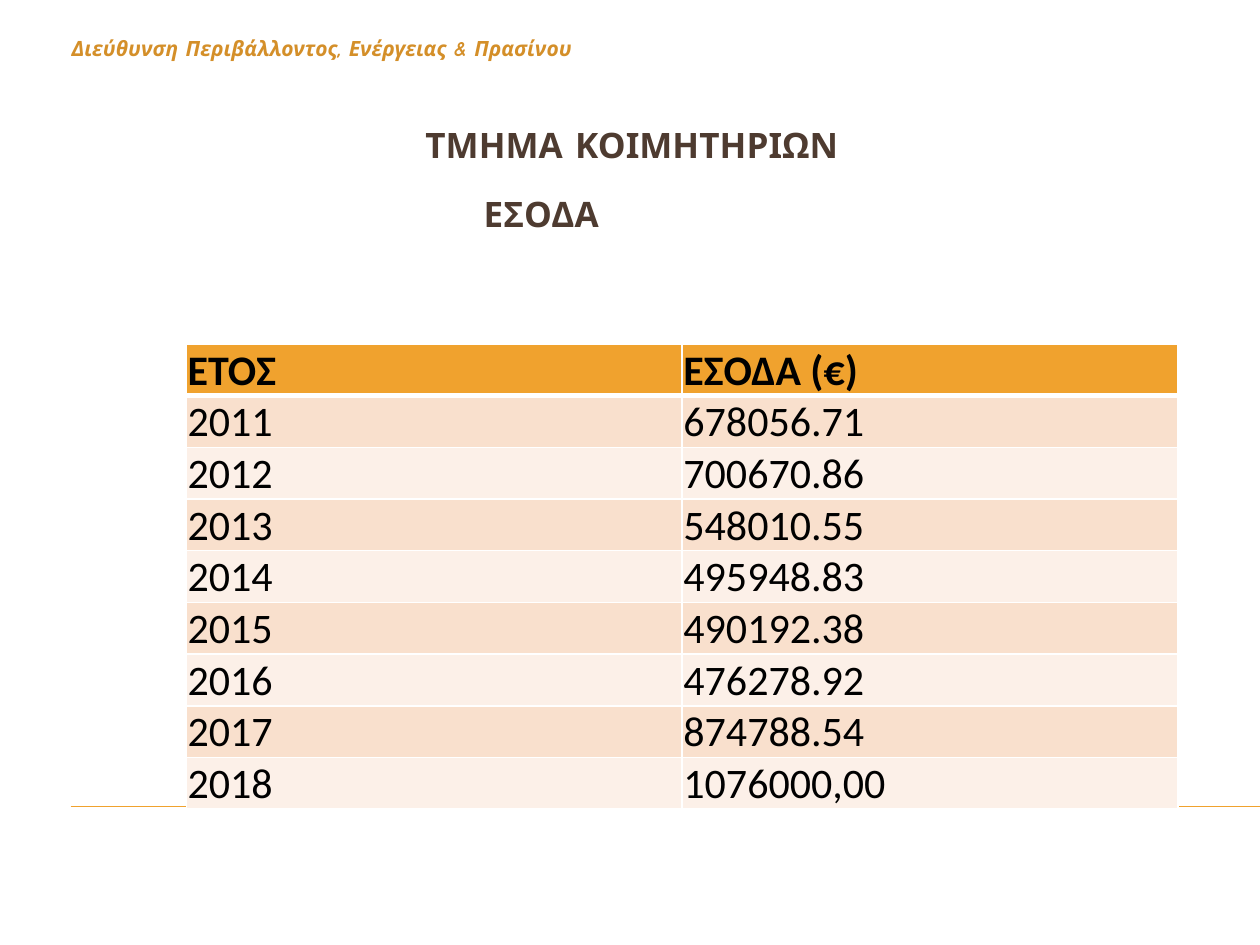
from lxml.etree import SubElement
from pptx import Presentation
from pptx.dml.color import RGBColor
from pptx.enum.shapes import MSO_CONNECTOR
from pptx.enum.text import MSO_ANCHOR, PP_ALIGN
from pptx.oxml.ns import qn
from pptx.util import Inches, Pt

COLORS = {
    "accent": "F0A22E",
    "department": "D48F29",
    "heading": "4E3B30",
    "band_dark": "F9E0CD",
    "band_light": "FCF0E8",
    "border": "FFFFFF",
    "cell_text": "000000",
}
HEADING = {"size": Pt(20), "name": "Comic Neue", "bold": True, "italic": False}
DEPARTMENT = {"size": Pt(12), "name": "Comic Neue", "bold": True, "italic": True}
CELL = {"size": Pt(24), "name": "Calibri"}

INCOME = [
    ("ΕΤΟΣ", "ΕΣΟΔΑ (€)"),
    ("2011", "678056.71"),
    ("2012", "700670.86"),
    ("2013", "548010.55"),
    ("2014", "495948.83"),
    ("2015", "490192.38"),
    ("2016", "476278.92"),
    ("2017", "874788.54"),
    ("2018", "1076000,00"),
]


def color(key):
    return RGBColor.from_string(COLORS[key])


def write(frame, text, font_values, color_key, alignment=PP_ALIGN.LEFT):
    para = frame.paragraphs[0]
    para.alignment = alignment
    span = para.add_run()
    span.text = text
    for name, value in font_values.items():
        setattr(span.font, name, value)
    span.font.color.rgb = color(color_key)


def add_title(page, box, text):
    title = page.shapes.title
    for name, value in zip(("left", "top", "width", "height"), box):
        setattr(title, name, Inches(value))
    title.text_frame.vertical_anchor = MSO_ANCHOR.MIDDLE
    write(title.text_frame, text, HEADING, "heading", PP_ALIGN.CENTER)


def add_label(page, box, *text_format):
    frame = page.shapes.add_textbox(*map(Inches, box)).text_frame
    frame.word_wrap = True
    write(frame, *text_format)


def add_footer_rule(page, left, right, top):
    rule = page.shapes.add_connector(
        MSO_CONNECTOR.STRAIGHT, *map(Inches, (left, top, right, top)))
    rule.line.color.rgb = color("accent")
    rule.line.width = Pt(0.75)
    SubElement(rule._element.spPr, qn("a:effectLst"))


def add_borders(cell, widths):
    """Draw the left, right, top and bottom borders; call before filling the cell."""
    properties = cell._tc.get_or_add_tcPr()
    for side, width in zip("LRTB", widths):
        edge = SubElement(properties, qn(f"a:ln{side}"), w=str(Pt(width)))
        fill = SubElement(edge, qn("a:solidFill"))
        SubElement(fill, qn("a:srgbClr"), val=COLORS["border"])


def add_income_table(page, box, rows):
    frame = page.shapes.add_table(len(rows), len(rows[0]), *map(Inches, box))
    cell_format = {
        "vertical_anchor": MSO_ANCHOR.BOTTOM,
        "margin_left": Inches(0.01),
        "margin_right": Inches(0.01),
        "margin_top": Inches(0.01),
        "margin_bottom": 0,
    }
    for row, values in enumerate(rows):
        header = row == 0
        band = "accent" if header else "band_dark" if row % 2 else "band_light"
        widths = (1, 1, 3 if row == 1 else 1, 3 if header else 1)
        for column, value in enumerate(values):
            cell = frame.table.cell(row, column)
            for name, setting in cell_format.items():
                setattr(cell, name, setting)
            add_borders(cell, widths)
            cell.fill.solid()
            cell.fill.fore_color.rgb = color(band)
            write(cell.text_frame, value, {**CELL, "bold": header}, "cell_text")


def main():
    deck = Presentation()
    deck.slide_width, deck.slide_height = Inches(10), Inches(7.5)
    page = deck.slides.add_slide(deck.slide_layouts[5])
    add_footer_rule(page, 0.56, 10, 6.4)
    add_title(page, (0.39, 0.86, 9.25, 0.57), "ΤΜΗΜΑ ΚΟΙΜΗΤΗΡΙΩΝ")
    add_label(page, (0.39, 1.48, 7.81, 0.55), "ΕΣΟΔΑ",
              HEADING, "heading", PP_ALIGN.CENTER)
    add_label(page, (0.47, 0.23, 6.61, 0.32),
              "Διεύθυνση Περιβάλλοντος, Ενέργειας & Πρασίνου",
              DEPARTMENT, "department")
    add_income_table(page, (1.48, 2.73, 7.87, 3.69), INCOME)
    deck.save("out.pptx")


if __name__ == "__main__":
    main()
